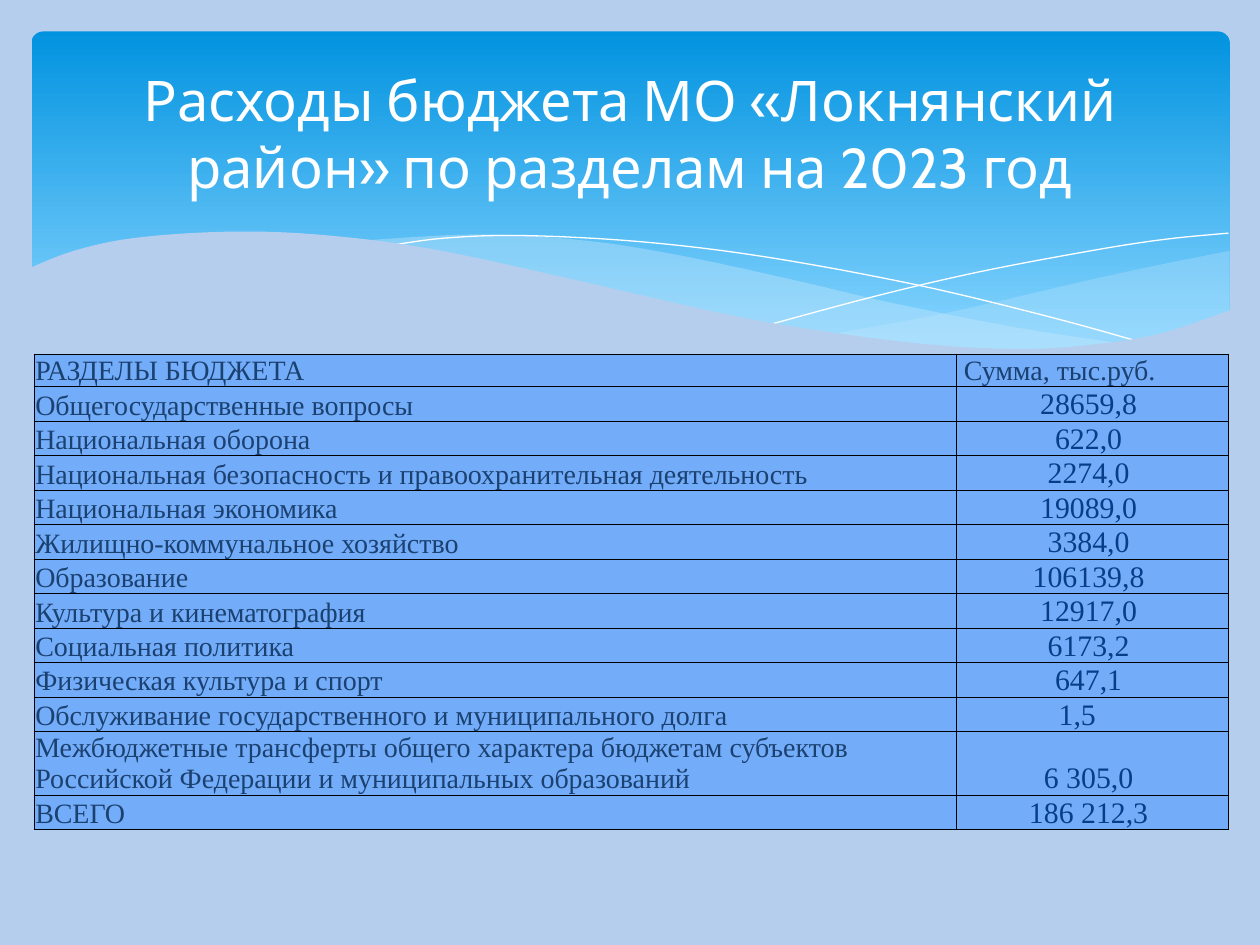
from lxml import etree
from pptx import Presentation
from pptx.dml.color import RGBColor
from pptx.enum.shapes import MSO_SHAPE
from pptx.enum.text import MSO_ANCHOR, MSO_AUTO_SIZE, PP_ALIGN
from pptx.oxml.ns import qn
from pptx.util import Inches, Pt

ROUNDED = MSO_SHAPE.ROUNDED_RECTANGLE
MIDDLE, BOTTOM = MSO_ANCHOR.MIDDLE, MSO_ANCHOR.BOTTOM
LEFT, CENTER = PP_ALIGN.LEFT, PP_ALIGN.CENTER
NO_AUTOFIT = MSO_AUTO_SIZE.NONE

THEME = {
    "background": "B5CEED", "banner_top": "0293E0", "banner_bottom": "83D3FE",
    "wave": "C6E7FC", "white": "FFFFFF", "cell": "73ACF8", "border": "000000",
    "label": "1B4171", "amount": "073E87",
    "title_font": "Cabin", "table_font": "Times New Roman",
    "title_size": 32, "label_size": 16, "amount_size": 17,
}

# Content
TITLE = "Расходы бюджета МО «Локнянский район» по разделам на 2023 год"
HEADER = ("РАЗДЕЛЫ БЮДЖЕТА", "Сумма, тыс.руб.")
EXPENSES = [
    ("Общегосударственные вопросы", "28659,8"),
    ("Национальная оборона", "622,0"),
    ("Национальная безопасность и правоохранительная деятельность", "2274,0"),
    ("Национальная экономика", "19089,0"),
    ("Жилищно-коммунальное хозяйство", "3384,0"),
    ("Образование", "106139,8"),
    ("Культура и кинематография", "12917,0"),
    ("Социальная политика", "6173,2"),
    ("Физическая культура и спорт", "647,1"),
    ("Обслуживание государственного и муниципального долга", "1,5"),
    ("Межбюджетные трансферты общего характера бюджетам субъектов "
     "Российской Федерации и муниципальных образований", "6 305,0"),
    ("ВСЕГО", "186 212,3"),
]
COLUMN_WIDTHS = (7.32, 2.16)
HEADER_HEIGHT, ROW_HEIGHT, TALL_ROW_HEIGHT = 0.26, 0.27, 0.5
TALL_ROW, SHIFTED_ROW = 11, 10

# Waves: each outline is a chain of smooth curves given by their knots
RIGHT_WAVE = [
    [(9.76, 1.99), (9.21, 2.1), (8.61, 2.23), (7.53, 2.48), (6.61, 2.65)],
    [(6.61, 2.65), (7.32, 2.74), (8.03, 2.78), (8.72, 2.74), (9.28, 2.63), (9.76, 2.47)],
]
LONG_WAVE = [
    [(8.93, 2.73), (8.07, 2.6), (7.06, 2.4), (6.29, 2.22), (5.41, 2.03),
     (4.65, 1.91), (3.8, 1.86), (2.86, 1.91)],
    [(2.86, 1.91), (3.62, 2.03), (4.49, 2.22), (5.66, 2.48), (6.65, 2.66),
     (7.48, 2.76), (8.18, 2.78), (8.93, 2.73)],
]
FRONT_WAVE = [
    [(9.77, 2.46), (9.2, 2.65), (8.63, 2.74), (8.09, 2.77), (7.44, 2.74),
     (6.68, 2.65), (5.79, 2.5), (4.47, 2.2), (3.39, 1.97), (2.5, 1.86),
     (1.77, 1.84), (1.06, 1.89), (0.59, 1.99), (0.23, 2.13)],
    [(0.23, 3.29), (9.77, 3.29)],
]
FALLING_LINE = [[(3.09, 1.95), (3.53, 1.89), (4.16, 1.87), (5.1, 1.92),
                 (6.08, 2.04), (7.27, 2.26), (8.31, 2.51), (9.07, 2.72)]]
RISING_LINE = [[(6.13, 2.57), (6.95, 2.35), (7.76, 2.16), (8.66, 1.99),
                (9.24, 1.9), (9.75, 1.85)]]


def color(name):
    return RGBColor.from_string(THEME[name])


def smooth(knots, steps=6):
    """Sample a Catmull-Rom curve through the knots."""
    padded = [knots[0], *knots, knots[-1]]
    points = [knots[0]]
    for a, b, c, d in zip(padded, padded[1:], padded[2:], padded[3:]):
        for step in range(1, steps + 1):
            t = step / steps
            points.append(tuple(
                (2 * q + (r - p) * t + (2 * p - 5 * q + 4 * r - s) * t ** 2
                 + (3 * q - p - 3 * r + s) * t ** 3) / 2
                for p, q, r, s in zip(a, b, c, d)))
    return points


def add_curve(slide, curves, fill=None, opacity=100):
    # The builder rounds to whole units, so points go in as EMU
    points = [(Inches(x), Inches(y)) for knots in curves for x, y in smooth(knots)]
    builder = slide.shapes.build_freeform(*points[0])
    builder.add_line_segments(points[1:], close=fill is not None)
    shape = builder.convert_to_shape()
    shape.shadow.inherit = False
    if fill is None:
        shape.fill.background()
        shape.line.color.rgb = color("white")
        shape.line.width = Pt(0)
        return
    shape.fill.solid()
    shape.fill.fore_color.rgb = color(fill)
    shape.line.fill.background()
    if opacity < 100:
        tint = shape._element.spPr.find(qn("a:solidFill"))[0]
        etree.SubElement(tint, qn("a:alpha"), val=str(opacity * 1000))


def add_banner(slide):
    banner = slide.shapes.add_shape(ROUNDED, Inches(0.25), Inches(0.25),
                                    Inches(9.51), Inches(2.7))
    banner.adjustments[0] = 0.034
    banner.shadow.inherit = False
    banner.line.fill.background()
    banner.fill.gradient()
    banner.fill.gradient_angle = 270
    stops = zip(banner.fill.gradient_stops, ("banner_top", "banner_bottom"), (0, 0.9))
    for stop, name, position in stops:
        stop.color.rgb = color(name)
        stop.position = position


def format_span(span, font, size, name):
    span.font.name = THEME[font]
    span.font.size = Pt(THEME[size])
    span.font.color.rgb = color(name)


def place_title(slide):
    title = slide.shapes.title
    title.left, title.top = Inches(0.5), Inches(0.37)
    title.width, title.height = Inches(9), Inches(1.37)
    frame = title.text_frame
    frame.text = TITLE
    frame.word_wrap = True
    frame.auto_size = NO_AUTOFIT
    frame.vertical_anchor = MIDDLE
    para = frame.paragraphs[0]
    para.alignment = CENTER
    format_span(para.runs[0], "title_font", "title_size", "white")
    slide.shapes._spTree.append(title._element)  # bring in front of the banner


def add_borders(cell):
    properties = cell._tc.get_or_add_tcPr()
    for index, side in enumerate(("lnL", "lnR", "lnT", "lnB")):
        line = etree.Element(qn(f"a:{side}"), w=str(Pt(0.5)))
        fill = etree.SubElement(line, qn("a:solidFill"))
        etree.SubElement(fill, qn("a:srgbClr"), val=THEME["border"])
        properties.insert(index, line)


def fill_cell(cell, text, is_amount, left=0.01, right=0.01):
    cell.text_frame.text = text
    cell.vertical_anchor = BOTTOM
    cell.margin_left, cell.margin_right = Inches(left), Inches(right)
    cell.margin_top, cell.margin_bottom = Inches(0.01), 0
    cell.fill.solid()
    cell.fill.fore_color.rgb = color("cell")
    add_borders(cell)
    para = cell.text_frame.paragraphs[0]
    para.alignment = CENTER if is_amount else LEFT
    kind = "amount" if is_amount else "label"
    format_span(para.runs[0], "table_font", f"{kind}_size", kind)


def add_expenses(slide):
    rows = [HEADER, *EXPENSES]
    heights = [HEADER_HEIGHT] + [ROW_HEIGHT] * len(EXPENSES)
    heights[TALL_ROW] = TALL_ROW_HEIGHT
    table = slide.shapes.add_table(
        len(rows), len(HEADER), Inches(0.27), Inches(2.81),
        Inches(sum(COLUMN_WIDTHS)), Inches(sum(heights))).table
    table.first_row = table.horz_banding = False
    for column, width in zip(table.columns, COLUMN_WIDTHS):
        column.width = Inches(width)
    for index, (label, amount) in enumerate(rows):
        table.rows[index].height = Inches(heights[index])
        fill_cell(table.cell(index, 0), label, False)
        if index == 0:
            fill_cell(table.cell(index, 1), amount, False, left=0.06)
        else:
            right = 0.25 if index == SHIFTED_ROW else 0.07
            fill_cell(table.cell(index, 1), amount, True, right=right)


def main():
    deck = Presentation()
    deck.slide_width, deck.slide_height = Inches(10), Inches(7.5)
    slide = deck.slides.add_slide(deck.slide_layouts.get_by_name("Title Only"))
    slide.background.fill.solid()
    slide.background.fill.fore_color.rgb = color("background")
    add_banner(slide)
    add_curve(slide, RIGHT_WAVE, "wave", 29)
    add_curve(slide, LONG_WAVE, "wave", 40)
    add_curve(slide, FALLING_LINE)
    add_curve(slide, RISING_LINE)
    add_curve(slide, FRONT_WAVE, "background")
    place_title(slide)
    add_expenses(slide)
    deck.save("out.pptx")


if __name__ == "__main__":
    main()
